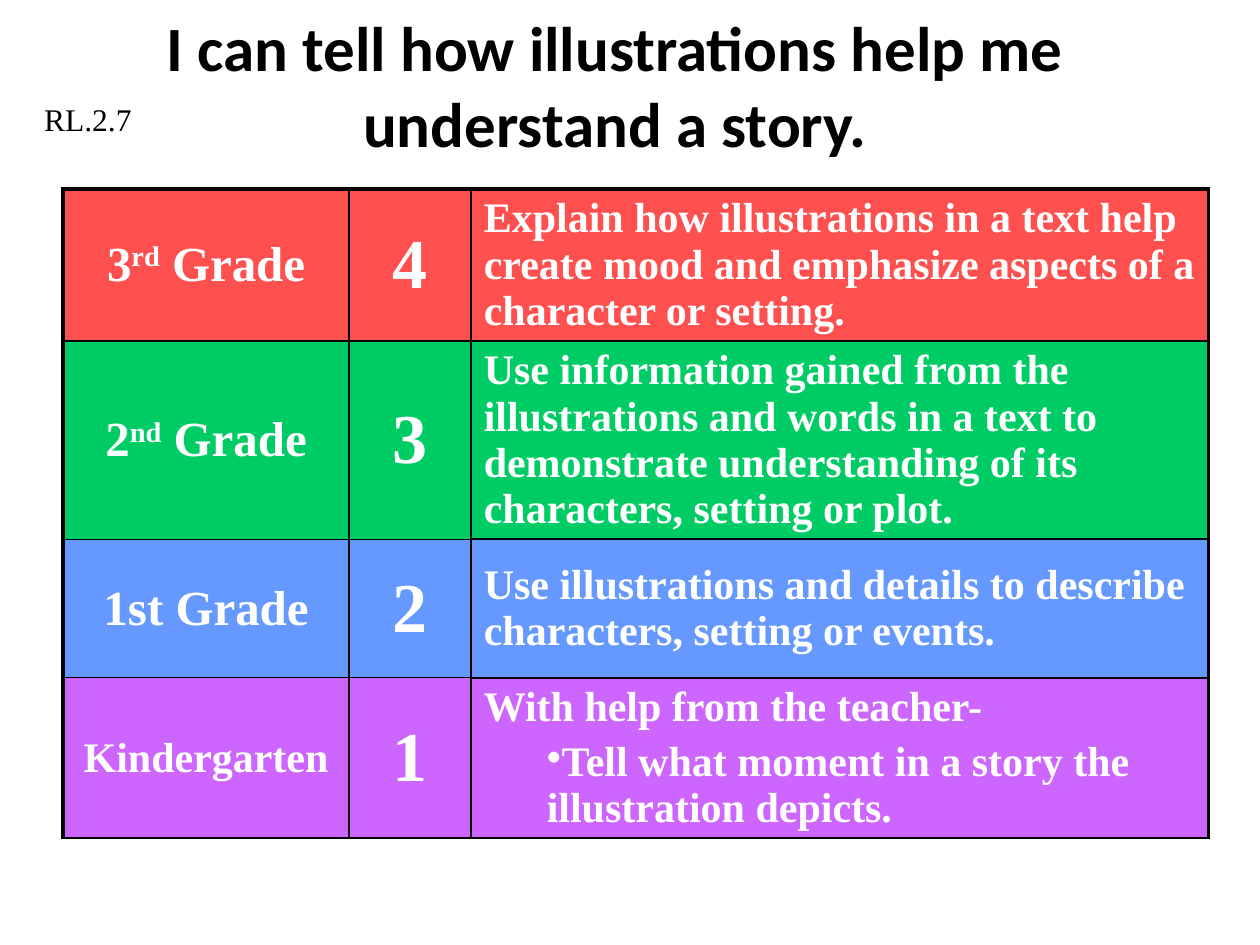
from lxml import etree
from pptx import Presentation
from pptx.dml.color import RGBColor
from pptx.enum import text
from pptx.oxml import ns
from pptx.util import Cm, Pt

TITLE = "I can tell how illustrations help me understand a story."
STANDARD = "RL.2.7"
SERIF = "Times New Roman"

# fill, grade runs, grade size, score, description paragraphs
LEVELS = [
    ("FF5050", ["3", "^rd", " Grade"], 28, "4",
     ["Explain how illustrations in a text help create mood and emphasize "
      "aspects of a character or setting."]),
    ("00CC66", ["2", "^nd", " Grade"], 28, "3",
     ["Use information gained from the illustrations and words in a text to "
      "demonstrate understanding of its characters, setting or plot."]),
    ("6699FF", ["1st Grade"], 28, "2",
     ["Use illustrations and details to describe characters, setting or events."]),
    ("CC66FF", ["Kindergarten"], 24, "1",
     ["With help from the teacher-",
      "•Tell what moment in a story the illustration depicts."]),
]
COL_WIDTHS = [5.77, 2.46, 14.86]
ROW_HEIGHTS = [2.79, 3.3, 2.79, 2.79]
COL_LINES = [2.25, 1, 1, 2.25]
ROW_LINES = [2.25, 1.5, 1, 1, 1.5]
DESCRIPTION_LINES = [2.25, 1.5, 1.5, 1.5, 1.5]


def color(value):
    return RGBColor.from_string(value)


def add_run(p, words, size, hex_color, name=SERIF, bold=True):
    """Add a run; a leading ^ makes it superscript."""
    r = p.add_run()
    r.text = words.lstrip("^")
    for key, value in dict(size=Pt(size), name=name, bold=bold).items():
        setattr(r.font, key, value)
    r.font.color.rgb = color(hex_color)
    if words.startswith("^"):
        r.font._element.set("baseline", "30000")


def write_cell(cell, paragraphs, size, align):
    cell.vertical_anchor = text.MSO_ANCHOR.MIDDLE
    tf = cell.text_frame
    for i, runs in enumerate(paragraphs):
        p = tf.add_paragraph() if i else tf.paragraphs[0]
        p.alignment = align
        p.space_before = Pt(size * 0.2)
        if runs[0].startswith("•"):
            runs = [runs[0][1:]]
            pPr = p._p.get_or_add_pPr()
            pPr.set("marL", str(Cm(1.27)))
            pPr.set("indent", "0")
            etree.SubElement(pPr, ns.qn("a:buChar"), char="•")
        for words in runs:
            add_run(p, words, size, "FFFFFF")


def set_borders(cell, widths):
    """Draw black left, right, top and bottom lines, ahead of the fill."""
    tcPr = cell._tc.get_or_add_tcPr()
    for i, (side, width) in enumerate(zip("LRTB", widths)):
        ln = etree.Element(ns.qn(f"a:ln{side}"), w=str(Pt(width)))
        fill = etree.SubElement(ln, ns.qn("a:solidFill"))
        etree.SubElement(fill, ns.qn("a:srgbClr"), val="000000")
        tcPr.insert(i, ln)


def add_levels(s):
    table = s.shapes.add_table(len(LEVELS), len(COL_WIDTHS), Cm(1.27), Cm(3.81),
                               Cm(sum(COL_WIDTHS)), Cm(sum(ROW_HEIGHTS))).table
    for column, width in zip(table.columns, COL_WIDTHS):
        column.width = Cm(width)
    for row, height in zip(table.rows, ROW_HEIGHTS):
        row.height = Cm(height)
    center, left = text.PP_ALIGN.CENTER, text.PP_ALIGN.LEFT
    for i, (fill, grade, grade_size, score, description) in enumerate(LEVELS):
        contents = [([grade], grade_size, center), ([[score]], 40, center),
                    ([[d] for d in description], 24, left)]
        for j, content in enumerate(contents):
            cell = table.cell(i, j)
            write_cell(cell, *content)
            cell.fill.solid()
            cell.fill.fore_color.rgb = color(fill)
            lines = DESCRIPTION_LINES if j == 2 else ROW_LINES
            set_borders(cell, COL_LINES[j:j + 2] + lines[i:i + 2])


def main():
    prs = Presentation()
    prs.slide_width, prs.slide_height = Cm(25.4), Cm(19.05)
    s = prs.slides.add_slide(prs.slide_layouts[5])

    title = s.shapes.title
    box = dict(left=0.43, top=0.43, width=23.93, height=2.54)
    for key, value in box.items():
        setattr(title, key, Cm(value))
    tf = title.text_frame
    tf.auto_size = text.MSO_AUTO_SIZE.NONE
    tf.vertical_anchor = text.MSO_ANCHOR.MIDDLE
    p = tf.paragraphs[0]
    p.alignment = text.PP_ALIGN.CENTER
    add_run(p, TITLE, 36, "000000", "Calibri")

    add_levels(s)

    label = s.shapes.add_textbox(Cm(0.64), Cm(1.9), Cm(3.61), Cm(1.02))
    label.text_frame.word_wrap = True
    label.text_frame.auto_size = text.MSO_AUTO_SIZE.SHAPE_TO_FIT_TEXT
    add_run(label.text_frame.paragraphs[0], STANDARD, 18, "000000", bold=False)

    prs.save("out.pptx")


if __name__ == "__main__":
    main()
